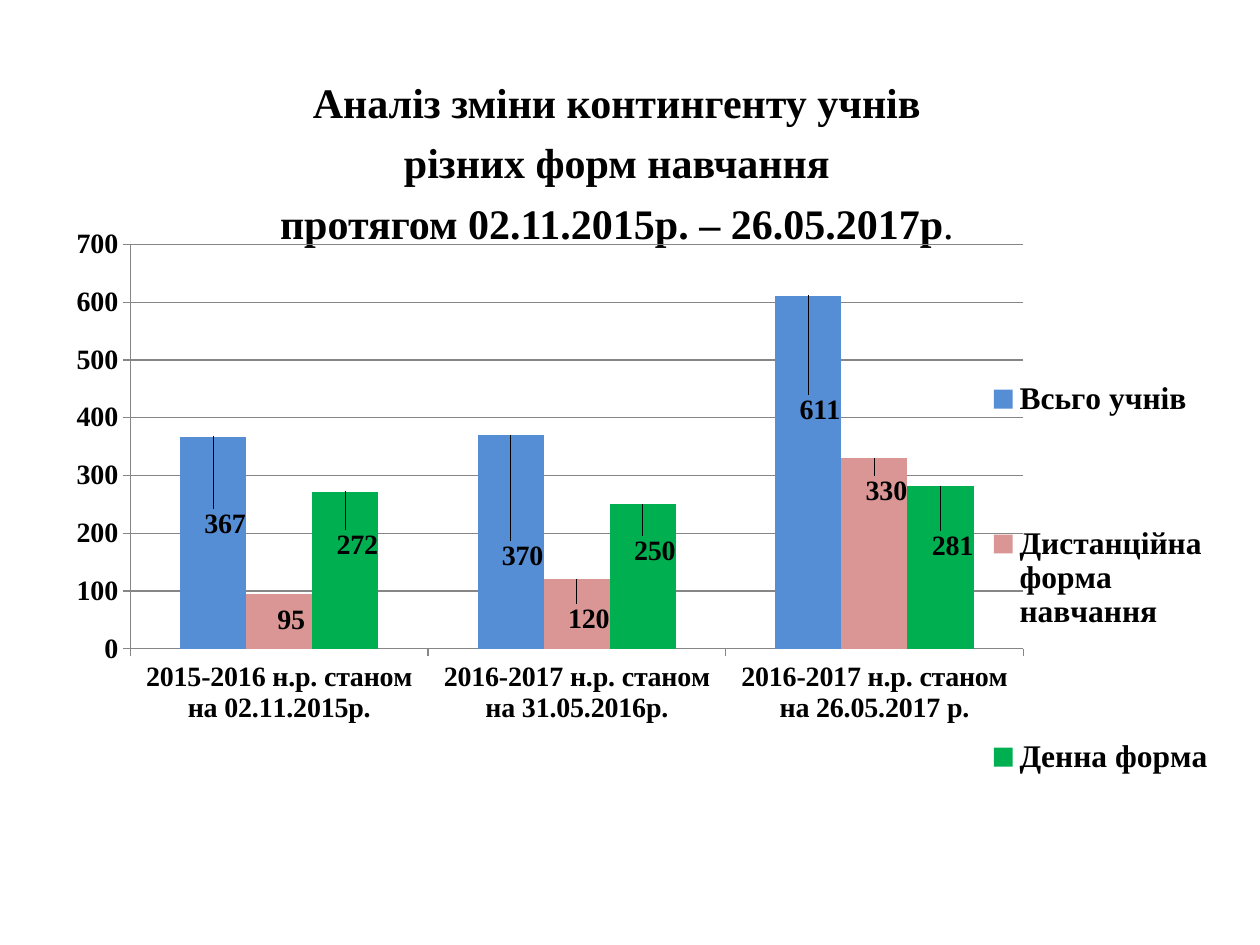
from lxml import etree
from pptx import Presentation
from pptx.chart.data import CategoryChartData
from pptx.dml.color import RGBColor
from pptx.enum.chart import XL_CHART_TYPE, XL_LABEL_POSITION, XL_LEGEND_POSITION, XL_TICK_MARK
from pptx.enum.text import MSO_ANCHOR, PP_ALIGN
from pptx.oxml.ns import qn
from pptx.util import Cm, Pt

COLUMNS = XL_CHART_TYPE.COLUMN_CLUSTERED
ABOVE = XL_LABEL_POSITION.OUTSIDE_END
RIGHT = XL_LEGEND_POSITION.RIGHT
OUTSIDE = XL_TICK_MARK.OUTSIDE
MIDDLE = MSO_ANCHOR.MIDDLE
CENTER = PP_ALIGN.CENTER

BLACK = RGBColor(0, 0, 0)
GRAY = RGBColor(0x86, 0x86, 0x86)
BLUE = RGBColor(0x55, 0x8E, 0xD5)
PINK = RGBColor(0xD9, 0x96, 0x94)
GREEN = RGBColor(0x00, 0xB0, 0x50)
FACE = "Times New Roman"


def style(font, size, bold=True):
    font.name = FACE
    font.size = Pt(size)
    font.bold = bold
    font.color.rgb = BLACK


def arrange(part, index, **values):
    """Give a chart part a manual layout, as fractions of the chart."""
    for old in part.findall(qn("c:layout")):
        part.remove(old)
    layout = etree.Element(qn("c:layout"))
    manual = etree.SubElement(layout, qn("c:manualLayout"))
    for tag, value in values.items():
        etree.SubElement(manual, qn("c:" + tag)).set("val", str(value))
    part.insert(index, layout)


deck = Presentation()
deck.slide_width, deck.slide_height = Cm(25.4), Cm(19.05)
slide = deck.slides.add_slide(deck.slide_layouts[5])

# Title
title = slide.shapes.title
title.left, title.top, title.width, title.height = Cm(1.1), Cm(0.92), Cm(21.4), Cm(5.2)
frame = title.text_frame
frame.word_wrap = True
frame.vertical_anchor = MIDDLE
frame.margin_bottom = Cm(0.85)
frame.text = ("Аналіз зміни контингенту учнів\vрізних форм навчання\v"
              "протягом 02.11.2015р. – 26.05.2017р")
para = frame.paragraphs[0]
para.alignment = CENTER
para.line_spacing = 1.2
props = para._p.get_or_add_pPr()
props.set("marL", str(Cm(1.27)))
props.set("indent", "0")
for run in para.runs:
    style(run.font, 24)
for line in para._p.findall(qn("a:br")):
    etree.SubElement(line, qn("a:rPr")).set("sz", "2400")
dot = para.add_run()
dot.text = "."
style(dot.font, 24, False)

# Chart data: name, values, colour, label drop from the bar's top
series = [
    ("Всьго учнів", (367, 370, 611), BLUE, (0.16, 0.21, 0.2)),
    ("Дистанційна форма навчання", (95, 120, 330), PINK, (0.07, 0.09, 0.08)),
    ("Денна форма", (272, 250, 281), GREEN, (0.11, 0.1, 0.12)),
]
data = CategoryChartData()
data.categories = ["2015-2016 н.р. станом на 02.11.2015р.",
                   "2016-2017 н.р. станом на 31.05.2016р.",
                   "2016-2017 н.р. станом на 26.05.2017 р."]
for name, values, color, drops in series:
    data.add_series(name, values)

# Chart
chart = slide.shapes.add_chart(
    COLUMNS, Cm(0.71), Cm(4.52), Cm(24), Cm(13.59), data).chart
chart.has_title = False
style(chart.font, 16)
plot = chart.plots[0]
plot.gap_width = 150
plot.overlap = 0
plot.vary_by_categories = False
area = chart._chartSpace.find(".//" + qn("c:plotArea"))
arrange(area, 0, layoutTarget="inner", xMode="edge", yMode="edge",
        x=0.08, y=0.03, w=0.75, h=0.6)

# Columns and their labels
for bars, (name, values, color, drops) in zip(plot.series, series):
    bars.format.fill.solid()
    bars.format.fill.fore_color.rgb = color
    bars.invert_if_negative = False
    bars.data_labels.show_value = True
    style(bars.data_labels.font, 16)
    for i, drop in enumerate(drops):
        label = bars.points[i].data_label
        style(label.font, 16)
        label.position = ABOVE
    for tag, drop in zip(bars._element.iter(qn("c:dLbl")), drops):
        arrange(tag, 1, x=0.01, y=drop)

# Axes
for axis in (chart.category_axis, chart.value_axis):
    axis.major_tick_mark = OUTSIDE
    axis.format.line.color.rgb = GRAY
    style(axis.tick_labels.font, 16)
scale = chart.value_axis
scale.minimum_scale, scale.maximum_scale, scale.major_unit = 0, 700, 100
scale.has_major_gridlines = True
scale.major_gridlines.format.line.color.rgb = GRAY

# Legend
chart.has_legend = True
legend = chart.legend
legend.position = RIGHT
legend.include_in_layout = False
style(legend.font, 18)
arrange(legend._element, 1, xMode="edge", yMode="edge",
        x=0.79, y=0.07, w=0.21, h=0.91)

deck.save("out.pptx")
